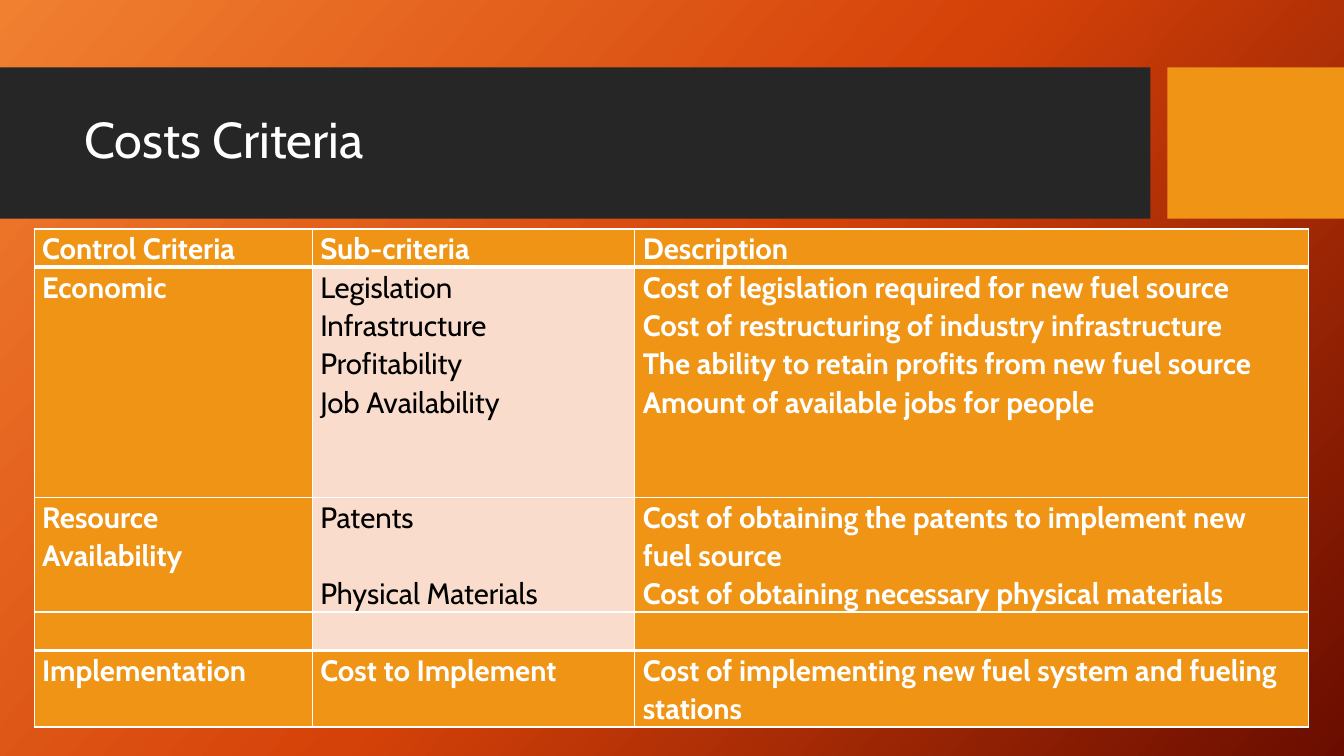
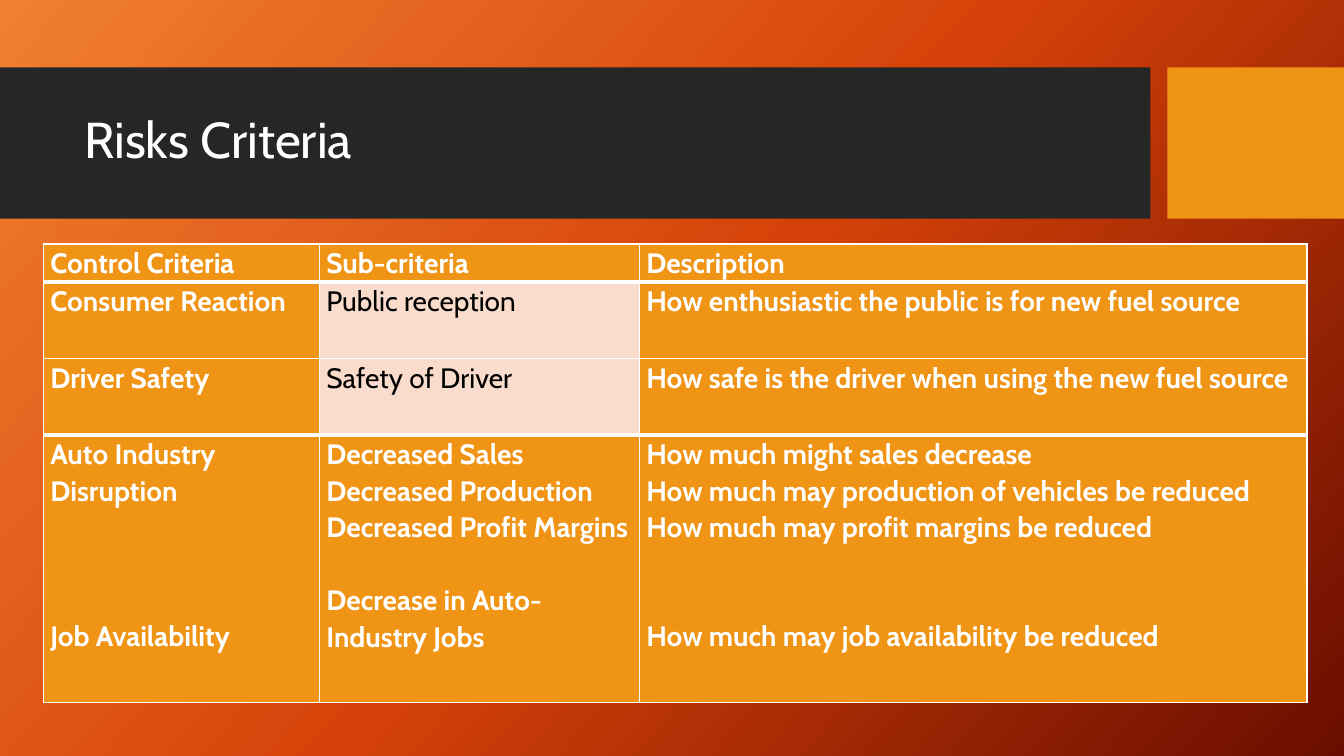
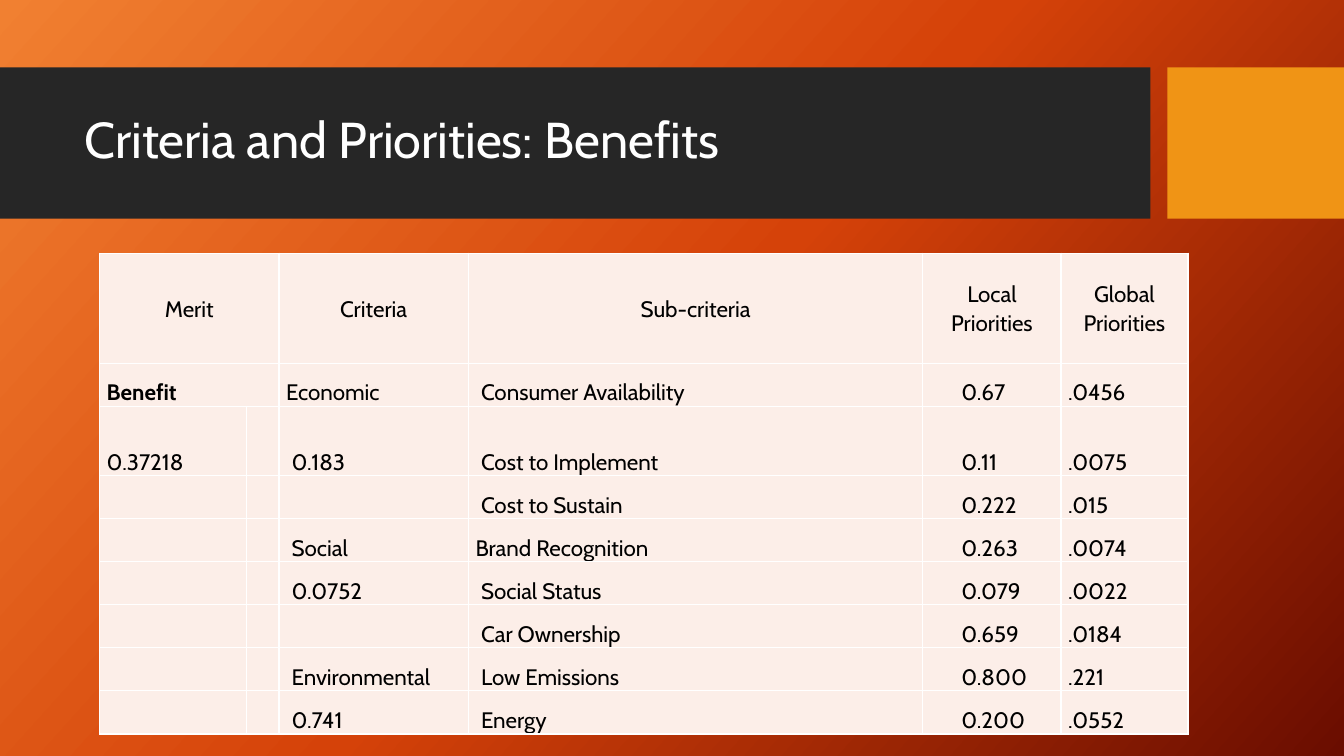
import dataclasses

import lxml.etree
import pptx
import pptx.dml.color
import pptx.enum.shapes
import pptx.enum.text
import pptx.oxml.ns
import pptx.util
import copy

Cm, Pt = pptx.util.Cm, pptx.util.Pt
Align, Anchor = pptx.enum.text.PP_ALIGN, pptx.enum.text.MSO_ANCHOR
qn = pptx.oxml.ns.qn


@dataclasses.dataclass(frozen=True)
class Theme:
    font: str = "Cabin"
    white: str = "FFFFFF"
    black: str = "000000"
    band: str = "262626"
    accent: str = "F09415"
    pale: str = "F9DCCC"
    faint: str = "FCEEE8"
    glow: tuple = ((0, "F18031"), (0.5, "D54209"), (1, "6A0D00"))
    angle: int = 42
    title: int = 36
    small: int = 16
    lead: float = 1.07  # line spacing in tables
    line: float = 1.3  # height of a table line, in type sizes
    thin: int = 1
    thick: int = 3


THEME = Theme()


def rgb(code):
    return pptx.dml.color.RGBColor.from_string(code)


def style(para, size, color, bold=False, lead=THEME.lead):
    para.line_spacing = lead
    for run in para.runs:
        font = run.font
        font.name, font.size, font.bold = THEME.font, Pt(size), bold
        font.color.rgb = rgb(color)


def glow(slide):
    """Fill the background with the three-stop gradient."""
    fill = slide.background.fill
    fill.gradient()
    stops = slide.element.find(".//" + qn("a:gsLst"))
    stops.append(copy.deepcopy(stops[-1]))
    for stop, (place, color) in zip(fill.gradient_stops, THEME.glow):
        stop.position = place
        stop.color.rgb = rgb(color)
    fill.gradient_angle = 360 - THEME.angle


def block(slide, left, top, width, height, color):
    shape = slide.shapes.add_shape(
        pptx.enum.shapes.MSO_SHAPE.RECTANGLE,
        Cm(left), Cm(top), Cm(width), Cm(height))
    shape.shadow.inherit = False
    shape.fill.solid()
    shape.fill.fore_color.rgb = rgb(color)
    shape.line.fill.background()


def header(slide, text, box=(0, 1.7, 33.87, 3.81)):
    """Dark title band with an accent block at its right end."""
    left, top, width, height = box
    side, gap = 4.45, 0.43
    block(slide, left, top, width - side - gap, height, THEME.band)
    block(slide, left + width - side, top, side, height, THEME.accent)
    title = slide.shapes.add_textbox(
        Cm(left + 1.88), Cm(top + 0.38), Cm(26.7), Cm(3))
    frame = title.text_frame
    frame.word_wrap = True
    frame.vertical_anchor = Anchor.MIDDLE
    frame.text = text
    style(frame.paragraphs[0], THEME.title, THEME.white, lead=0.9)


def edge(cell, **widths):
    """Draw white borders; L, R, T and B override the thin width."""
    props = cell._tc.get_or_add_tcPr()
    for side in "LRTB":
        width = widths.get(side, THEME.thin)
        line = lxml.etree.SubElement(props, qn("a:ln" + side), w=str(Pt(width)))
        solid = lxml.etree.SubElement(line, qn("a:solidFill"))
        lxml.etree.SubElement(solid, qn("a:srgbClr"), val=THEME.white)


def paint(cell, color, pad):
    cell.fill.solid()
    cell.fill.fore_color.rgb = rgb(color)
    cell.margin_left = cell.margin_right = Cm(pad)
    cell.margin_top = cell.margin_bottom = 0


def grid(slide, box, cols, rows):
    """Add a plain table whose columns and rows share out the box."""
    left, top, width, height = box
    table = slide.shapes.add_table(
        len(rows), len(cols), Cm(left), Cm(top), Cm(width), Cm(height)).table
    table.first_row = table.horz_banding = False
    for col, share in zip(table.columns, cols):
        col.width = Cm(width * share / sum(cols))
    for row, share in zip(table.rows, rows):
        row.height = Cm(height * share / sum(rows))
    return table


def write(cell, lines, size, color, bold):
    """Set paragraphs; a (text, gap) pair leaves that many lines above."""
    pairs = [(item, 0) if isinstance(item, str) else item for item in lines]
    cell.text_frame.text = "\n".join(text for text, gap in pairs)
    for para, (text, gap) in zip(cell.text_frame.paragraphs, pairs):
        style(para, size, color, bold)
        if gap:
            para.space_before = Pt(round(gap * size * THEME.line))


def criteria(slide, box, rows, data, size, pad):
    """Orange table with a pale middle column between first and last row."""
    table = grid(slide, box, (2.76, 3.2, 6.68), rows)
    heads = [[name] for name in ("Control Criteria", "Sub-criteria", "Description")]
    last = len(rows) - 1
    for r, line in enumerate([heads] + data):
        for c, lines in enumerate(line):
            cell = table.cell(r, c)
            soft = c == 1 and 0 < r < last
            edge(cell,
                 T=THEME.thick if r in (1, last) else THEME.thin,
                 B=THEME.thick if r in (0, last - 1) else THEME.thin)
            paint(cell, THEME.pale if soft else THEME.accent, pad)
            write(cell, lines, size,
                  THEME.black if soft else THEME.white, not soft)


def ranking(slide, box, data):
    """Table of merits, criteria and their local and global priorities."""
    rows = [1.1, 0.43, 0.69] + [0.43] * 6
    table = grid(slide, box, (1.46, 0.32, 1.88, 4.51, 1.37, 1.26), rows)
    pad = 0.18
    indent = {2: 0.32, 3: 0.32, 4: 0.97}
    flush = ("Economic", "Brand Recognition")
    for r, line in enumerate(data):
        merit, *rest = line
        for c, text in enumerate([merit, ""] + rest):
            cell = table.cell(r, c)
            edge(cell)
            paint(cell, THEME.faint, pad)
            cell.vertical_anchor = Anchor.BOTTOM if r else Anchor.MIDDLE
            write(cell, [text], THEME.small, THEME.black, text == "Benefit")
            if r == 0:
                cell.text_frame.paragraphs[0].alignment = Align.CENTER
            elif text not in flush:
                cell.margin_left = Cm(indent.get(c, pad))
    for r in (0, 1):
        table.cell(r, 0).merge(table.cell(r, 1))


COSTS = [
    [["Economic"],
     ["Legislation", "Infrastructure", "Profitability", "Job Availability"],
     ["Cost of legislation required for new fuel source",
      "Cost of restructuring of industry infrastructure",
      "The ability to retain profits from new fuel source",
      "Amount of available jobs for people"]],
    [["Resource Availability"],
     ["Patents", ("Physical Materials", 1)],
     ["Cost of obtaining the patents to implement new fuel source",
      "Cost of obtaining necessary physical materials"]],
    [[""], [""], [""]],
    [["Implementation"], ["Cost to Implement"],
     ["Cost of implementing new fuel system and fueling stations"]],
]

RISKS = [
    [["Consumer Reaction"], ["Public reception"],
     ["How enthusiastic the public is for new fuel source"]],
    [["Driver Safety"], ["Safety of Driver"],
     ["How safe is the driver when using the new fuel source"]],
    [["Auto Industry Disruption", ("Job Availability", 3)],
     ["Decreased Sales", "Decreased Production", "Decreased Profit Margins",
      ("Decrease in Auto-Industry Jobs", 1)],
     ["How much might sales decrease",
      "How much may production of vehicles be reduced",
      "How much may profit margins be reduced",
      ("How much may job availability be reduced", 2)]],
]

RANKS = [
    ("Merit", "Criteria", "Sub-criteria", "Local Priorities", "Global Priorities"),
    ("Benefit", "Economic", "Consumer Availability", "0.67", ".0456"),
    ("0.37218", "0.183", "Cost to Implement", "0.11", ".0075"),
    ("", "", "Cost to Sustain", "0.222", ".015"),
    ("", "Social", "Brand Recognition", "0.263", ".0074"),
    ("", "0.0752", "Social Status", "0.079", ".0022"),
    ("", "", "Car Ownership", "0.659", ".0184"),
    ("", "Environmental", "Low Emissions", "0.800", ".221"),
    ("", "0.741", "Energy", "0.200", ".0552"),
]


def main():
    deck = pptx.Presentation()
    deck.slide_width, deck.slide_height = Cm(33.87), Cm(19.05)

    def start(title):
        slide = deck.slides.add_slide(deck.slide_layouts[6])
        glow(slide)
        header(slide, title)
        return slide

    criteria(start("Costs Criteria"), (0.86, 5.77, 32.11, 12.55),
             (1, 6, 3, 1, 2), COSTS, size=21, pad=0.2)
    criteria(start("Risks Criteria"), (1.09, 6.15, 31.85, 11.56),
             (1, 2, 2, 7), RISKS, size=20, pad=0.18)
    ranking(start("Criteria and Priorities: Benefits"),
            (2.51, 6.38, 27.43, 12.12), RANKS)
    deck.save("out.pptx")


if __name__ == "__main__":
    main()
